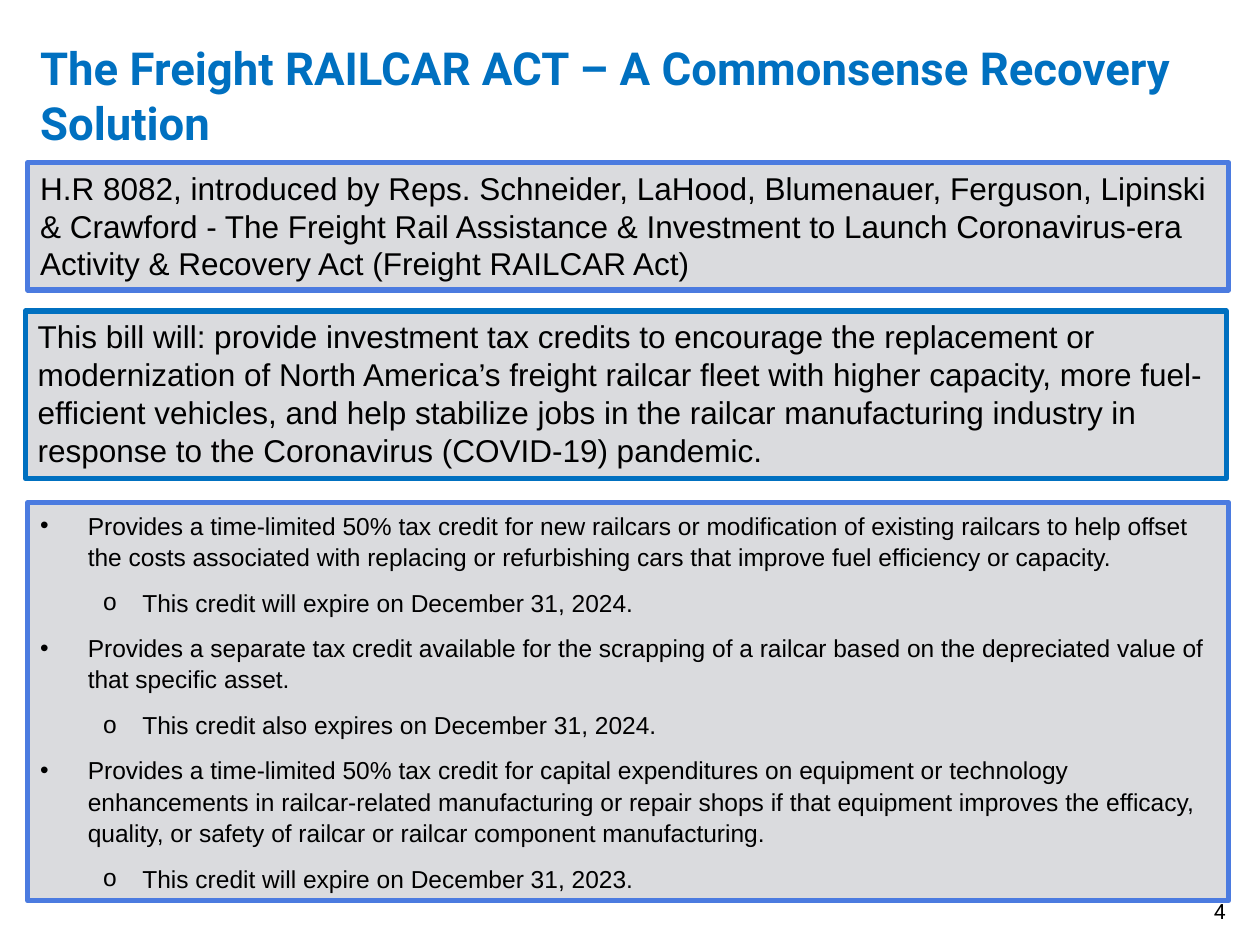
from lxml.etree import SubElement
from pptx import Presentation
from pptx.dml.color import RGBColor
from pptx.enum.shapes import MSO_SHAPE
from pptx.enum.text import MSO_ANCHOR, PP_ALIGN
from pptx.oxml.ns import qn
from pptx.util import Cm, Pt

BLUE = RGBColor(0x00, 0x70, 0xC0)
EDGE = RGBColor(0x4B, 0x7B, 0xE0)
GREY = RGBColor(0xDA, 0xDB, 0xDE)
BLACK = RGBColor(0, 0, 0)

# Bullet sign, left margin and hanging indent for each level
LEVELS = [("•", 0.96, 0.96), ("o", 2.06, 0.79)]

POINTS = [
    (0, "Provides a time-limited 50% tax credit for new railcars or modification of existing "
        "railcars to help offset the costs associated with replacing or refurbishing cars that "
        "improve fuel efficiency or capacity."),
    (1, "This credit will expire on December 31, 2024."),
    (0, "Provides a separate tax credit available for the scrapping of a railcar based on the "
        "depreciated value of that specific asset."),
    (1, "This credit also expires on December 31, 2024."),
    (0, "Provides a time-limited 50% tax credit for capital expenditures on equipment or "
        "technology enhancements in railcar-related manufacturing or repair shops if that "
        "equipment improves the efficacy, quality, or safety of railcar or railcar component "
        "manufacturing."),
    (1, "This credit will expire on December 31, 2023."),
]


class Deck:
    head = "Roboto"
    body = "Arial"
    wide = 24.21

    def __init__(self):
        self.prs = Presentation()
        self.prs.slide_width, self.prs.slide_height = Cm(25.4), Cm(19.05)
        self.slide = self.prs.slides.add_slide(self.prs.slide_layouts[6])

    def style(self, para, name, size, color=BLACK, bold=False):
        font = para.font
        font.name, font.size, font.bold = name, Pt(size), bold
        font.color.rgb = color

    def label(self, text, box, size, color=BLACK, bold=False, align=PP_ALIGN.LEFT, inset=0.25):
        frame = self.slide.shapes.add_textbox(*map(Cm, box)).text_frame
        frame.word_wrap = True
        frame.vertical_anchor = MSO_ANCHOR.MIDDLE
        frame.margin_left = frame.margin_right = Cm(inset)
        frame.margin_top = frame.margin_bottom = Cm(inset)
        para = frame.paragraphs[0]
        para.text, para.alignment = text, align
        self.style(para, self.head, size, color, bold)

    def panel(self, left, top, high, edge):
        shape = self.slide.shapes.add_shape(
            MSO_SHAPE.RECTANGLE, Cm(left), Cm(top), Cm(self.wide), Cm(high))
        shape.shadow.inherit = False
        shape.fill.solid()
        shape.fill.fore_color.rgb = GREY
        shape.line.color.rgb, shape.line.width = edge, Pt(3)
        frame = shape.text_frame
        frame.word_wrap = True
        frame.vertical_anchor = MSO_ANCHOR.TOP
        return frame

    def note(self, text, left, top, high, edge):
        para = self.panel(left, top, high, edge).paragraphs[0]
        para.text, para.alignment = text, PP_ALIGN.LEFT
        self.style(para, self.body, 18)

    def bullets(self, items, left, top, high, edge):
        frame = self.panel(left, top, high, edge)
        for i, (level, text) in enumerate(items):
            para = frame.add_paragraph() if i else frame.paragraphs[0]
            para.text, para.level, para.alignment = text, level, PP_ALIGN.LEFT
            para.line_spacing, para.space_after = 1.07, Pt(8)
            sign, margin, hang = LEVELS[level]
            props = para._p.get_or_add_pPr()
            props.set("marL", str(Cm(margin)))
            props.set("indent", str(-Cm(hang)))
            SubElement(props, qn("a:buFont"), typeface=self.body)
            SubElement(props, qn("a:buChar"), char=sign)
            self.style(para, self.body, 14)


deck = Deck()

# Title and page number
deck.label("The Freight RAILCAR ACT – A Commonsense Recovery Solution",
           (0.56, 0.81, 24.28, 2.21), 26, BLUE, True)
deck.label("4", (24.11, 18.11, 0.6, 0.51), 12, align=PP_ALIGN.RIGHT, inset=0)

# Purpose of the bill
deck.note("This bill will: provide investment tax credits to encourage the replacement or "
          "modernization of North America’s freight railcar fleet with higher capacity, more "
          "fuel-efficient vehicles, and help stabilize jobs in the railcar manufacturing "
          "industry in response to the Coronavirus (COVID-19) pandemic.",
          0.51, 6.27, 3.38, BLUE)

# Name of the bill
deck.note("H.R 8082, introduced by Reps. Schneider, LaHood, Blumenauer, Ferguson, Lipinski & "
          "Crawford - The Freight Rail Assistance & Investment to Launch Coronavirus-era "
          "Activity & Recovery Act (Freight RAILCAR Act)",
          0.56, 3.28, 2.57, EDGE)

# Tax credits
deck.bullets(POINTS, 0.56, 10.13, 8.03, EDGE)

deck.prs.save("out.pptx")
